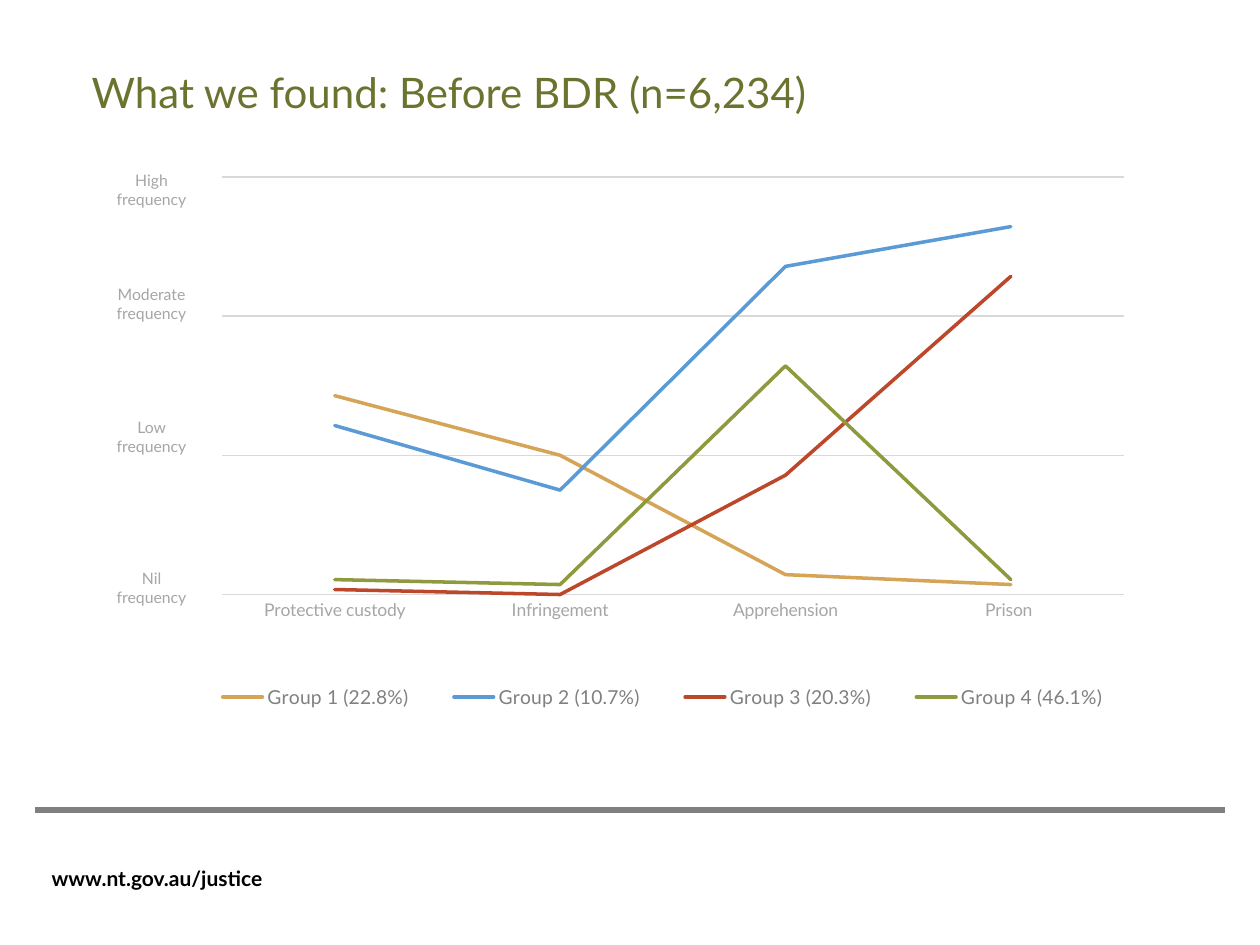
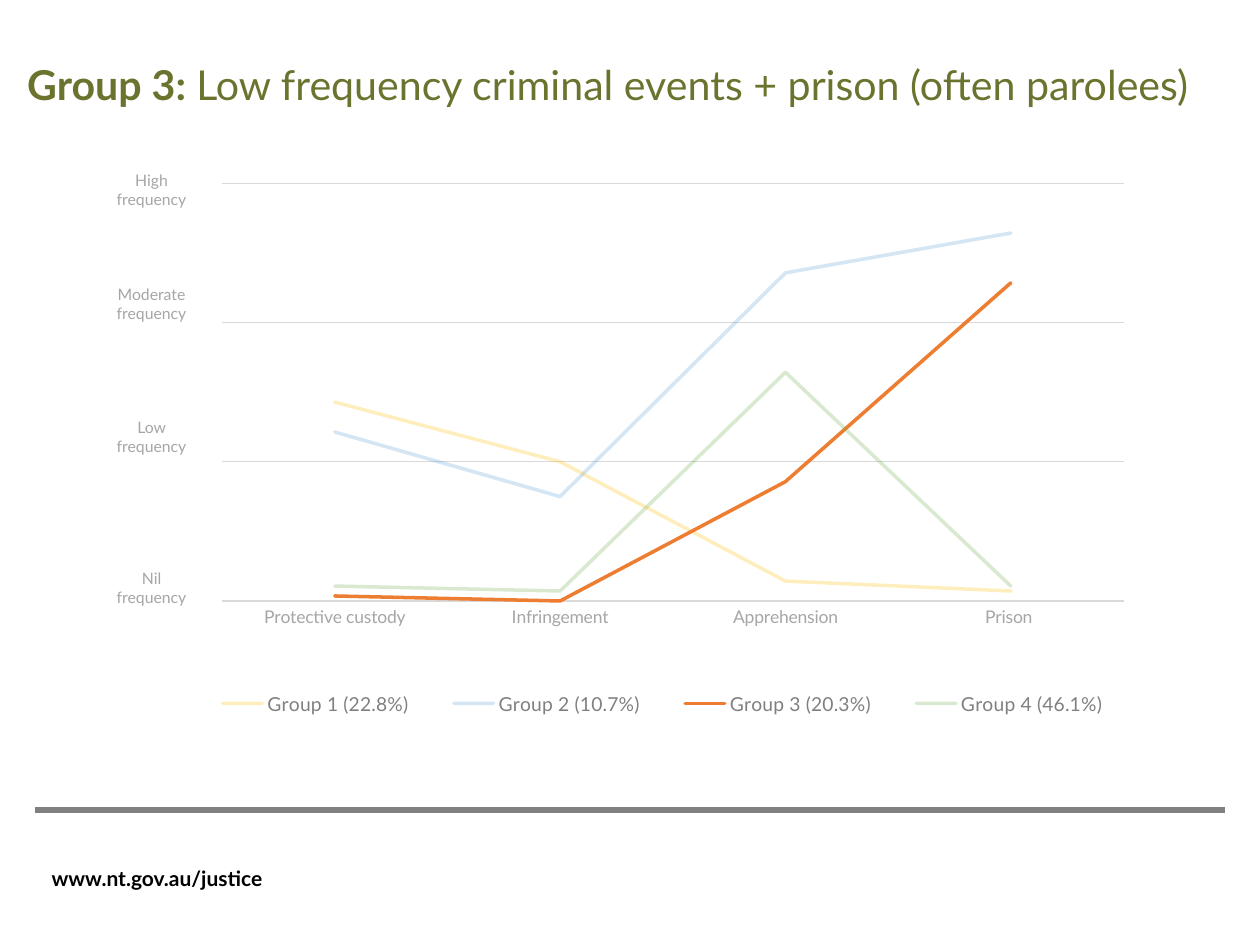
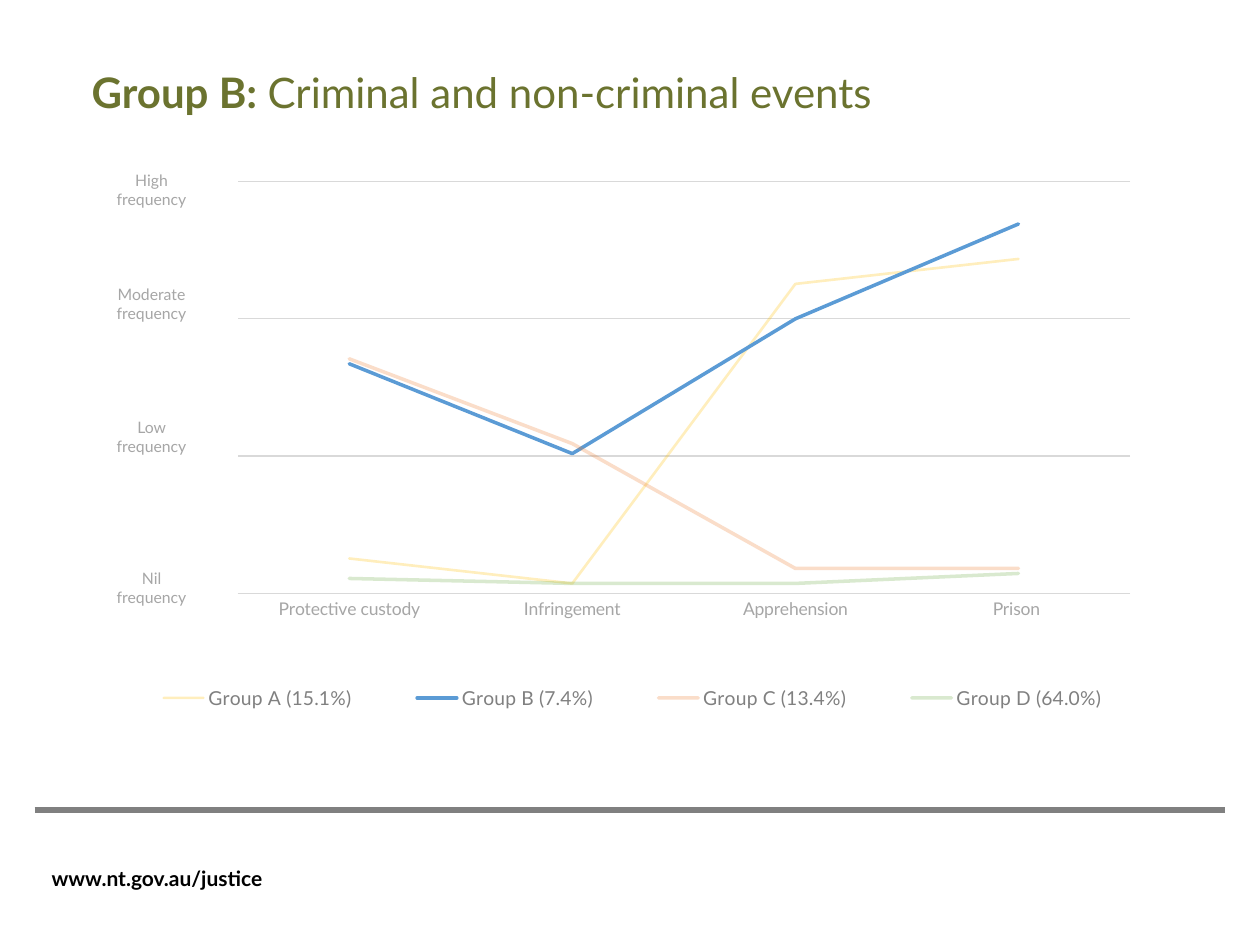
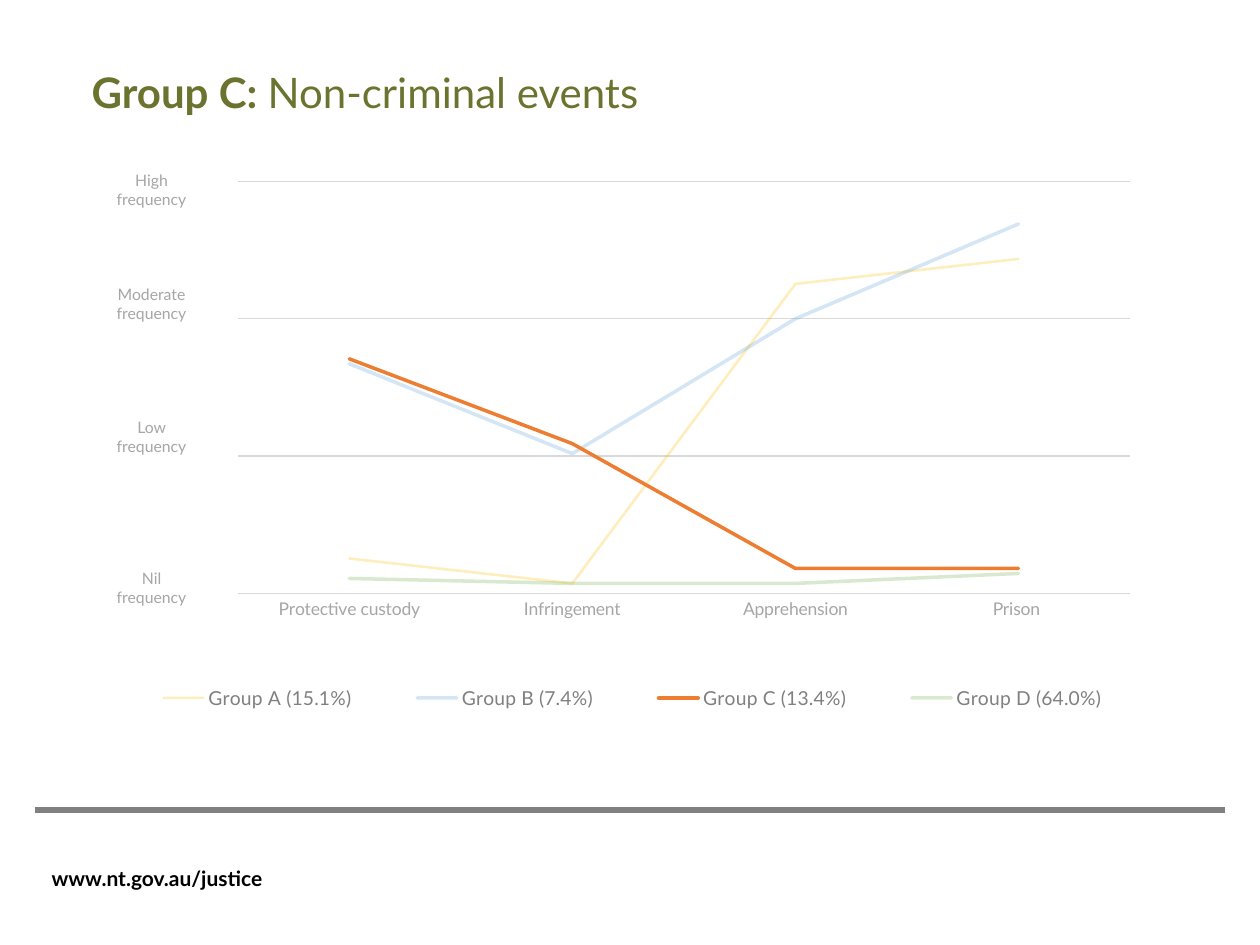
from lxml import etree
from pptx import Presentation
from pptx import util as u
from pptx.chart import data as chart_data
from pptx.dml.color import RGBColor
from pptx.enum import chart as charts, shapes, text
from pptx.oxml import parse_xml
from pptx.oxml.ns import nsdecls, qn

Cm, Pt = u.Cm, u.Pt
FONT = "Lato"
OLIVE = RGBColor(0x6B, 0x73, 0x2F)
BLACK = RGBColor(0x00, 0x00, 0x00)
GREY = RGBColor(0x80, 0x80, 0x80)
LABEL_GREY = RGBColor(0xA6, 0xA6, 0xA6)
GRID_GREY = RGBColor(0xD9, 0xD9, 0xD9)
SAND = RGBColor(0xD6, 0xA4, 0x57)
BLUE = RGBColor(0x5B, 0x9B, 0xD5)
BRICK = RGBColor(0xBD, 0x47, 0x2A)
MOSS = RGBColor(0x8F, 0x99, 0x3E)
YELLOW = RGBColor(0xFF, 0xC0, 0x00)
ORANGE = RGBColor(0xED, 0x7D, 0x31)
GREEN = RGBColor(0x70, 0xAD, 0x47)

EVENTS = ["Protective custody", "Infringement", "Apprehension", "Prison "]
LEVELS = [("High", 0), ("Moderate", 43.8), ("Low", 54), ("Nil", 64.8)]

BEFORE_BDR = {
    "groups": [
        ("Group 1 (22.8%)", (66, 54, 30, 28), 2),
        ("Group 2 (10.7%)", (60, 47, 92, 100), 2),
        ("Group 3 (20.3%)", (27, 26, 50, 90), 2),
        ("Group 4 (46.1%)", (29, 28, 72, 29), 2),
    ],
    "maximum": 112,
    "step": 28,
    "plot": {"x": 0.039, "y": 0.064, "w": 0.923, "h": 0.719},
    "legend": {"x": 0, "y": 0.91, "w": 0.98, "h": 0.09},
}
AFTER_BDR = {
    "groups": [
        ("Group A (15.1%)", (33, 28, 88, 93), 1.5),
        ("Group B (7.4%)", (72, 54, 81, 100), 2),
        ("Group C (13.4%)", (73, 56, 31, 31), 2),
        ("Group D (64.0%)", (29, 28, 28, 30), 2),
    ],
    "maximum": 110,
    "step": 27.5,
    "plot": {"x": 0.126, "y": 0.057, "w": 0.845, "h": 0.719},
    "legend": {"x": 0, "y": 0.91, "w": 1, "h": 0.09},
}
OVERVIEW_COLOURS = [SAND, BLUE, BRICK, MOSS]
FOCUS_COLOURS = [YELLOW, BLUE, ORANGE, GREEN]

TITLE_BOX = (1.6, 1.52, 21.79, 1.07)
WIDE_TITLE_BOX = (0.3, 1.36, 24, 1.07)
AFTER_CHART_BOX = (2.11, 2.84, 21.29, 11.76)

SLIDES = [
    ("", "What we found: Before BDR (n=6,234)", 24, TITLE_BOX,
     BEFORE_BDR, (3.71, 2.6, 19.69, 11.99), OVERVIEW_COLOURS, None),
    ("Group 3: ", "Low frequency criminal events + prison (often parolees)", 23.5,
     WIDE_TITLE_BOX, BEFORE_BDR, (3.71, 2.73, 19.69, 11.99), FOCUS_COLOURS, 2),
    ("Group B: ", "Criminal and non-criminal events", 24, TITLE_BOX,
     AFTER_BDR, AFTER_CHART_BOX, FOCUS_COLOURS, 1),
    ("Group C: ", "Non-criminal events", 24, TITLE_BOX,
     AFTER_BDR, AFTER_CHART_BOX, FOCUS_COLOURS, 2),
]


def add_text_frame(slide, box):
    frame = slide.shapes.add_textbox(*map(Cm, box)).text_frame
    frame.word_wrap = True
    return frame


def add_run(paragraph, words, size, colour, bold=False):
    run = paragraph.add_run()
    run.text = words
    run.font.name = FONT
    run.font.size = Pt(size)
    run.font.color.rgb = colour
    run.font.bold = bold


prs = Presentation()
prs.slide_width, prs.slide_height = Cm(25.4), Cm(19.05)

for group, finding, title_size, title_box, period, chart_box, colours, focus in SLIDES:
    slide = prs.slides.add_slide(prs.slide_layouts[6])

    rule = slide.shapes.add_connector(
        shapes.MSO_CONNECTOR.STRAIGHT, Cm(0.7), Cm(16.33), Cm(24.7), Cm(16.33))
    rule.line.color.rgb = GREY
    rule.line.width = Pt(3)
    etree.SubElement(rule._element.spPr, qn("a:effectLst"))

    website = add_text_frame(slide, (0.79, 17.32, 14.4, 0.76))
    add_run(website.paragraphs[0], "www.nt.gov.au/justice", 12, BLACK, True)

    title = add_text_frame(slide, title_box).paragraphs[0]
    title.line_spacing = Pt(20)
    if group:
        add_run(title, group, title_size, OLIVE, True)
    add_run(title, finding, title_size, OLIVE)

    frequencies = chart_data.CategoryChartData()
    frequencies.categories = EVENTS
    for name, values, _ in period["groups"]:
        frequencies.add_series(name, values)
    chart = slide.shapes.add_chart(
        charts.XL_CHART_TYPE.LINE, *map(Cm, chart_box), frequencies).chart
    chart.has_title = False
    chart.font.name = FONT
    chart.font.size = Pt(10)
    chart.font.color.rgb = BLACK

    chart.has_legend = True
    chart.legend.position = charts.XL_LEGEND_POSITION.BOTTOM
    chart.legend.include_in_layout = False
    chart.legend.font.name = FONT
    chart.legend.font.size = Pt(11)
    chart.legend.font.color.rgb = GREY

    event_axis = chart.category_axis
    event_axis.major_tick_mark = charts.XL_TICK_MARK.NONE
    event_axis.tick_labels.font.name = FONT
    event_axis.tick_labels.font.size = Pt(10)
    event_axis.tick_labels.font.color.rgb = LABEL_GREY

    frequency_axis = chart.value_axis
    frequency_axis.visible = False
    frequency_axis.minimum_scale = 26
    frequency_axis.maximum_scale = period["maximum"]
    frequency_axis.major_unit = period["step"]
    for line in (event_axis.format.line, frequency_axis.major_gridlines.format.line):
        line.color.rgb = GRID_GREY
        line.width = Pt(0.75)

    plot_area = chart._chartSpace.chart.plotArea
    legend = chart.legend._element
    for part, place, target, position in (
            (plot_area, period["plot"], '<c:layoutTarget val="inner"/>', 0),
            (legend, period["legend"], "", 1)):
        for old_layout in part.findall(qn("c:layout")):
            part.remove(old_layout)
        sides = "".join(f'<c:{side} val="{share}"/>' for side, share in place.items())
        part.insert(position, parse_xml(
            f'<c:layout {nsdecls("c")}><c:manualLayout>{target}<c:xMode val="edge"/>'
            f'<c:yMode val="edge"/>{sides}</c:manualLayout></c:layout>'))

    chart.plots[0].vary_by_categories = False
    for index, series in enumerate(chart.plots[0].series):
        series.smooth = False
        series.marker.style = charts.XL_MARKER_STYLE.NONE
        line = series.format.line
        line.color.rgb = colours[index]
        line.width = Pt(period["groups"][index][2])
        outline = series._element.spPr.find(qn("a:ln"))
        outline.set("cap", "rnd")
        if focus not in (None, index):
            colour = outline.find(f'{qn("a:solidFill")}/{qn("a:srgbClr")}')
            etree.SubElement(colour, qn("a:alpha"), val="25000")

    levels = add_text_frame(slide, (1.9, 3.31, 2.31, 9.45))
    for index, (level, gap) in enumerate(LEVELS):
        paragraph = levels.add_paragraph() if index else levels.paragraphs[0]
        paragraph.alignment = text.PP_ALIGN.CENTER
        if gap:
            paragraph.space_before = Pt(gap)
        add_run(paragraph, f"{level} frequency", 9, LABEL_GREY)

prs.save("out.pptx")
